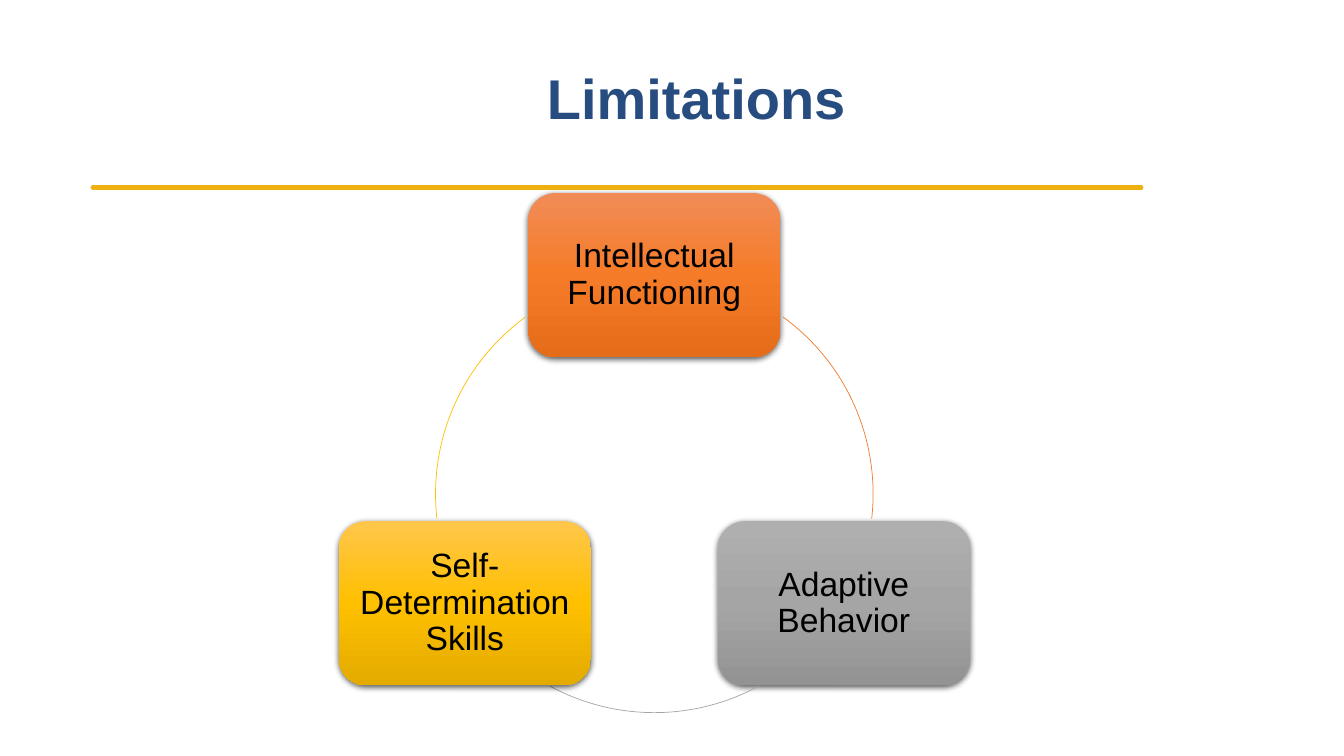
from copy import deepcopy
from dataclasses import dataclass
from math import cos, radians, sin

from lxml.etree import SubElement
from pptx import Presentation
from pptx.dml.color import RGBColor
from pptx.enum.shapes import MSO_CONNECTOR, MSO_SHAPE
from pptx.enum.text import MSO_ANCHOR, PP_ALIGN
from pptx.oxml.ns import qn
from pptx.util import Inches, Pt


@dataclass(frozen=True)
class Theme:
    font: str = "Arial"
    title_size: int = 40
    node_size: int = 24
    title: str = "264C80"
    node_text: str = "000000"
    rule: str = "EEB111"
    shadow: str = "000000"


THEME = Theme()

CENTER_X, CENTER_Y, RADIUS = 6.49, 4.9, 2.17
NODE_WIDTH, NODE_HEIGHT = 2.5, 1.63

# Label, gradient from top to bottom, arc colour, arc start and end in degrees
LIMITATIONS = [
    ("Intellectual Functioning", ("F18C57", "F67B28", "E56C19"), "ED7D31", 306, 6.5),
    ("Adaptive Behavior", ("AFAFAF", "A5A5A5", "939393"), "A5A5A5", 61.5, 118.5),
    ("Self-Determination Skills", ("FFC64B", "FFC000", "E3AB00"), "FFC000", 173.5, 234),
]


def rgb(color):
    return RGBColor.from_string(color)


def write(frame, text, size, color, bold=False):
    frame.word_wrap = True
    frame.vertical_anchor = MSO_ANCHOR.MIDDLE
    paragraph = frame.paragraphs[0]
    paragraph.text = text
    paragraph.alignment = PP_ALIGN.CENTER
    paragraph.line_spacing = 0.9
    font = paragraph.font
    font.name, font.size, font.bold = THEME.font, Pt(size), bold
    font.color.rgb = rgb(color)


def add_title(slide, text):
    title = slide.shapes.add_textbox(Inches(2.59), Inches(0.28), Inches(8.63), Inches(1.45))
    write(title.text_frame, text, THEME.title_size, THEME.title, bold=True)


def add_rule(slide):
    rule = slide.shapes.add_connector(
        MSO_CONNECTOR.STRAIGHT, Inches(0.92), Inches(1.86), Inches(11.32), Inches(1.86))
    rule.line.color.rgb = rgb(THEME.rule)
    rule.line.width = Pt(3)
    properties = rule._element.spPr
    properties.find(qn("a:ln")).set("cap", "rnd")
    SubElement(properties, qn("a:effectLst"))


def fill_gradient(shape, colors):
    """Fill from top to bottom with three evenly spaced colours."""
    shape.fill.gradient()
    shape.fill.gradient_angle = 270
    stop_list = next(shape._element.spPr.iter(qn("a:gsLst")))
    stop_list.append(deepcopy(stop_list[0]))
    for index, (stop, color) in enumerate(zip(shape.fill.gradient_stops, colors)):
        stop.position = index / 2
        stop.color.rgb = rgb(color)


def add_soft_shadow(shape):
    shape.shadow.inherit = False
    effects = shape._element.spPr.find(qn("a:effectLst"))
    shadow = SubElement(effects, qn("a:outerShdw"), blurRad=str(Pt(4.5)),
                        dist=str(Pt(1.5)), dir="5400000", algn="ctr", rotWithShape="0")
    color = SubElement(shadow, qn("a:srgbClr"), val=THEME.shadow)
    SubElement(color, qn("a:alpha"), val="63000")


def add_node(slide, label, gradient, angle):
    """Centre a rounded box on the cycle, at an angle clockwise from the right."""
    left = CENTER_X + RADIUS * cos(radians(angle)) - NODE_WIDTH / 2
    top = CENTER_Y + RADIUS * sin(radians(angle)) - NODE_HEIGHT / 2
    node = slide.shapes.add_shape(MSO_SHAPE.ROUNDED_RECTANGLE, Inches(left), Inches(top),
                                  Inches(NODE_WIDTH), Inches(NODE_HEIGHT))
    fill_gradient(node, gradient)
    node.line.fill.background()
    add_soft_shadow(node)
    frame = node.text_frame
    frame.margin_left = frame.margin_right = Inches(0.1)
    frame.margin_top = frame.margin_bottom = Inches(0.1)
    write(frame, label, THEME.node_size, THEME.node_text)


def add_arc(slide, color, start, end):
    arc = slide.shapes.add_shape(
        MSO_SHAPE.ARC, Inches(CENTER_X - RADIUS), Inches(CENTER_Y - RADIUS),
        Inches(2 * RADIUS), Inches(2 * RADIUS))
    # An adjustment of 0.6 is one degree
    arc.adjustments[0] = start * 0.6
    arc.adjustments[1] = end * 0.6
    arc.fill.background()
    arc.line.color.rgb = rgb(color)
    arc.line.width = Pt(0.5)
    arc.shadow.inherit = False


def main():
    deck = Presentation()
    deck.slide_width, deck.slide_height = Inches(13.33), Inches(7.5)
    slide = deck.slides.add_slide(deck.slide_layouts[6])
    add_rule(slide)
    add_title(slide, "Limitations")
    for index, (label, gradient, arc_color, start, end) in enumerate(LIMITATIONS):
        add_node(slide, label, gradient, angle=-90 + 120 * index)
        add_arc(slide, arc_color, start, end)
    deck.save("out.pptx")


if __name__ == "__main__":
    main()
